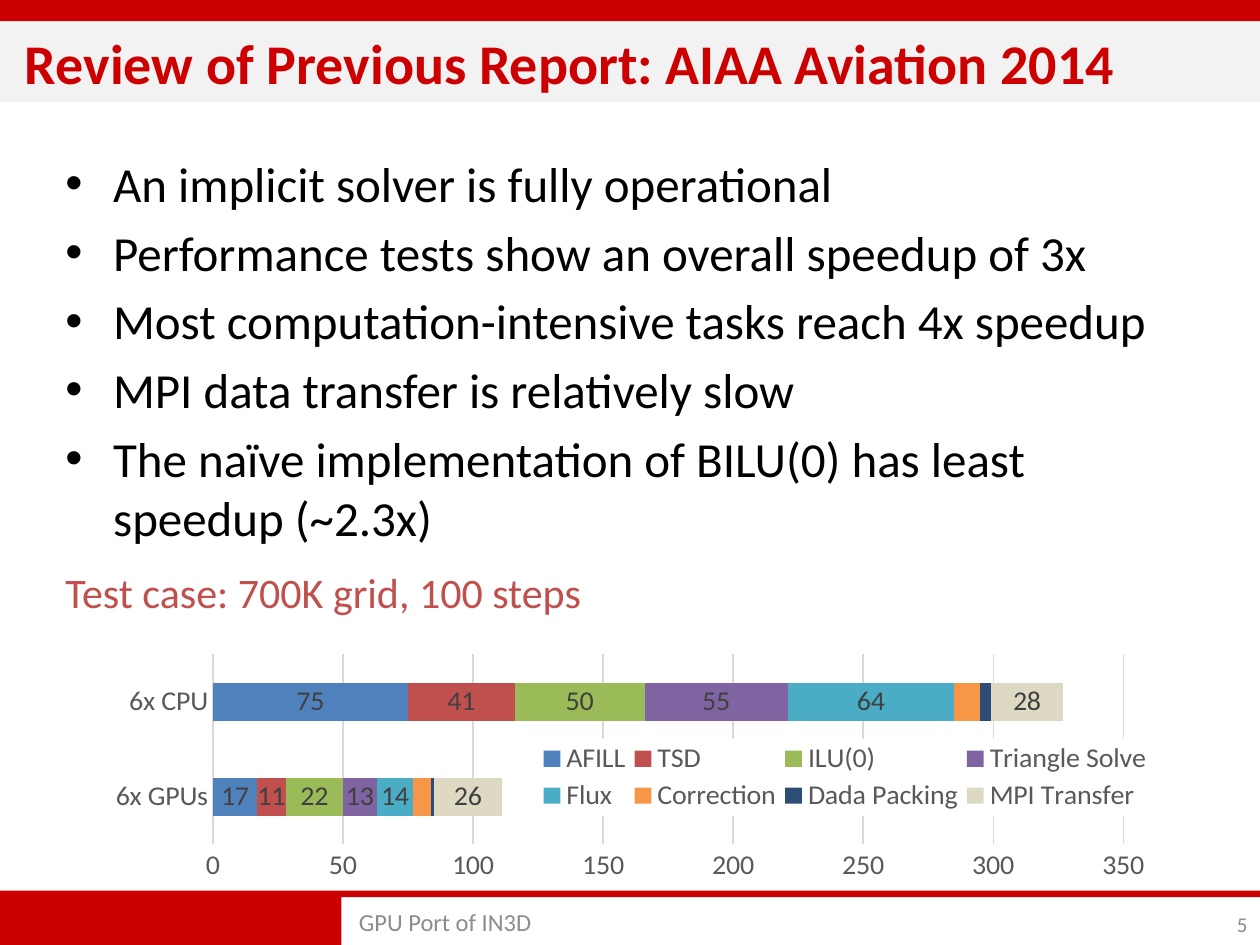
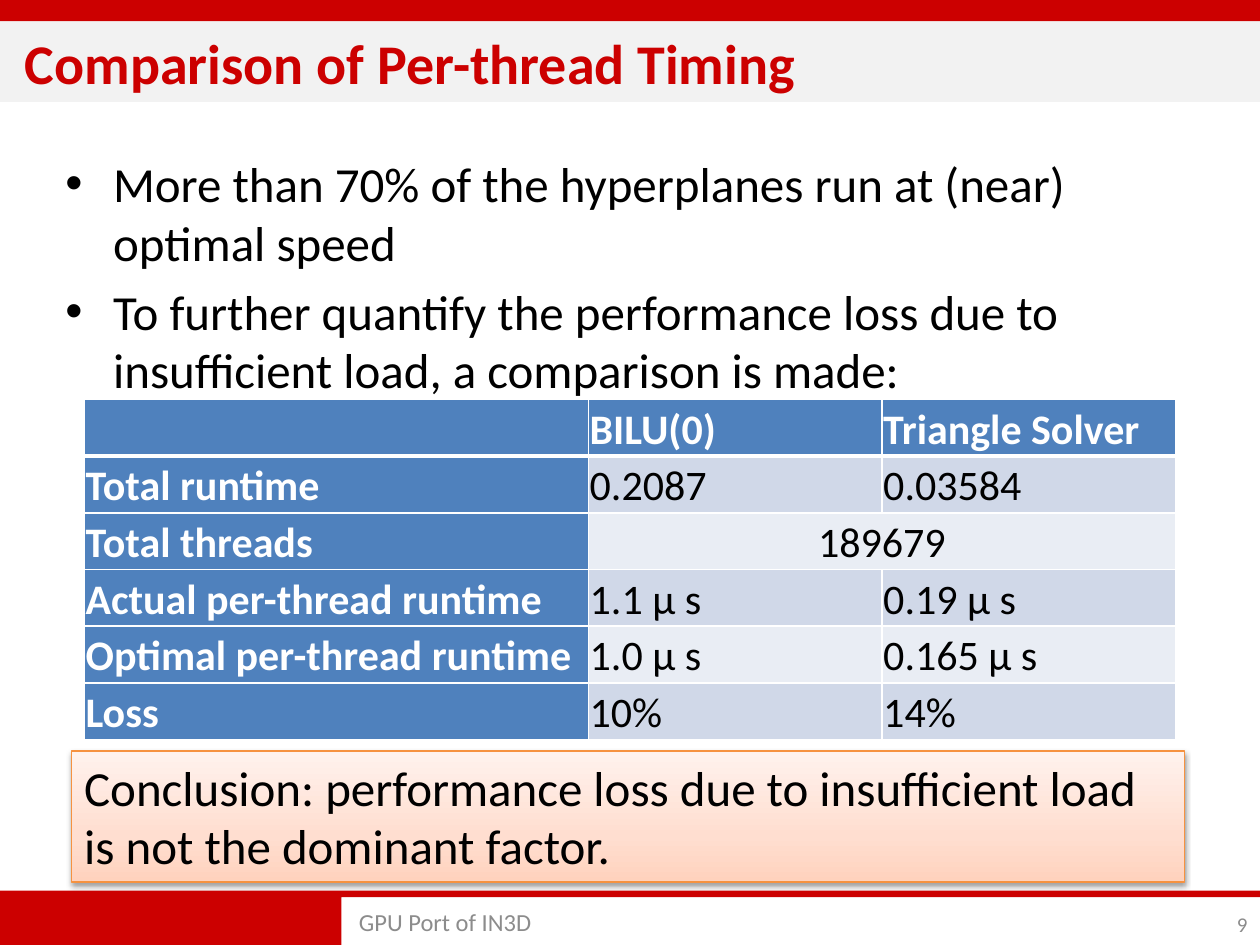
from copy import deepcopy

from lxml import etree
from pptx import Presentation
from pptx.chart.data import CategoryChartData
from pptx.dml.color import RGBColor
from pptx.enum.chart import XL_CHART_TYPE, XL_LEGEND_POSITION, XL_TICK_MARK
from pptx.enum.shapes import MSO_SHAPE
from pptx.enum.text import MSO_ANCHOR, PP_ALIGN
from pptx.oxml import parse_xml
from pptx.oxml.ns import nsdecls, qn
from pptx.util import Inches, Pt

RECTANGLE, CORNER = MSO_SHAPE.RECTANGLE, MSO_SHAPE.CORNER
TOP, MIDDLE = MSO_ANCHOR.TOP, MSO_ANCHOR.MIDDLE
LEFT, CENTER, RIGHT = PP_ALIGN.LEFT, PP_ALIGN.CENTER, PP_ALIGN.RIGHT
BAR_STACKED = XL_CHART_TYPE.BAR_STACKED
LEGEND_BOTTOM = XL_LEGEND_POSITION.BOTTOM
NO_TICKS = XL_TICK_MARK.NONE

FONT = "Calibri"
COLORS = {
    "brand": "CC0000", "title band": "F2F2F2", "footer": "8C8C8C",
    "text": "000000", "white": "FFFFFF", "test case": "C0504D",
    "axis text": "595959", "label": "404040", "grid": "D9D9D9",
    "header": "4F81BD", "odd row": "D0D8E8", "even row": "E9EDF4",
    "box line": "F69240",
}
BOX_GRADIENT = [(0, "FFD2BD"), (0.35, "FFDED0"), (1, "FFF2ED")]

SLIDE_BOX = (0, 0, 10, 7.5)
BODY_BOX = (0.42, 1.17, 9.17, 5.83)
CHART_BOX = (0.67, 5.08, 8.5, 1.92)
TABLE_BOX = (0.67, 3.17, 8.67, 2.7)
CONCLUSION_BOX = (0.57, 5.96, 8.83, 1.04)

PLOT_LAYOUT = (0.12, 0.06, 0.85, 0.81)
LEGEND_LAYOUT = (0.42, 0.42, 0.58, 0.33)
CATEGORIES = ["6x GPUs", "6x CPU"]
# name, color, values, whether the values are labelled
SERIES = [
    ("AFILL", "4F81BD", (17, 75), True),
    ("TSD", "C0504D", (11, 41), True),
    ("ILU(0)", "9BBB59", (22, 50), True),
    ("Triangle Solve", "8064A2", (13, 55), True),
    ("Flux", "4BACC6", (14, 64), True),
    ("Correction", "F79646", (7, 10), False),
    ("Dada Packing", "2C4D75", (1, 4), False),
    ("MPI Transfer", "DDD9C3", (26, 28), True),
]

TIMINGS = [
    ("", "BILU(0)", "Triangle Solver"),
    ("Total runtime", "0.2087", "0.03584"),
    ("Total threads", "189679", None),
    ("Actual per-thread runtime", "1.1 μ s", "0.19 μ s"),
    ("Optimal per-thread runtime", "1.0 μ s", "0.165 μ s"),
    ("Loss", "10%", "14%"),
]


def rgb(name):
    return RGBColor.from_string(COLORS.get(name, name))


def style_font(font, size, color, bold=False):
    font.name, font.size, font.bold = FONT, Pt(size), bold
    font.color.rgb = rgb(color)


def add_box(slide, box, fill, kind=RECTANGLE):
    """Add a borderless preset shape."""
    shape = slide.shapes.add_shape(kind, *map(Inches, box))
    shape.shadow.inherit = False
    shape.fill.solid()
    shape.fill.fore_color.rgb = rgb(fill)
    shape.line.fill.background()
    return shape


def write(shape, text, size, color, bold=False, anchor=TOP, align=LEFT):
    """Put one styled paragraph in a shape and return it."""
    frame = shape.text_frame
    frame.word_wrap = True
    frame.vertical_anchor = anchor
    paragraph = frame.paragraphs[0]
    paragraph.text = text
    paragraph.alignment = align
    style_font(paragraph.font, size, color, bold)
    return paragraph


def add_text_box(slide, box):
    return slide.shapes.add_textbox(*map(Inches, box))


def add_frame(slide, box, title, number):
    """Add the bands, title and footer that every slide has."""
    left, top, width, height = box
    footer_height, footer_line, footer_block = 0.43, 0.05, 2.71
    footer_top = top + height - footer_height
    corner = add_box(slide, (left, footer_top, width, footer_height), "brand", CORNER)
    corner.adjustments[0] = footer_line / footer_height
    corner.adjustments[1] = footer_block / footer_height
    corner._element.spPr.find(qn("a:xfrm")).set("flipV", "1")
    add_box(slide, (left, top, width, 0.17), "brand")

    title_band = add_box(slide, (left, top + 0.17, width, 0.64), "title band")
    paragraph = write(title_band, title, 32, "brand", bold=True, anchor=MIDDLE)
    paragraph._p.get_or_add_pPr().set("marL", str(Inches(0.1)))

    footer = add_text_box(slide, (left + 2.75, footer_top + 0.06, 5.58, 0.37))
    write(footer, "GPU Port of IN3D", 14, "footer", anchor=MIDDLE)
    page = add_text_box(slide, (left + width - 0.58, footer_top + 0.1, 0.58, 0.33))
    write(page, str(number), 12, "footer", anchor=MIDDLE, align=RIGHT)


def add_body(slide, box, bullets, closing=None):
    """Add a bullet list, with an optional plain closing line."""
    frame = add_text_box(slide, box).text_frame
    frame.word_wrap = True
    for index, text in enumerate(bullets):
        paragraph = frame.add_paragraph() if index else frame.paragraphs[0]
        paragraph.text = text
        properties = paragraph._p.get_or_add_pPr()
        properties.set("marL", str(Inches(0.38)))
        properties.set("indent", str(Inches(-0.38)))
        etree.SubElement(properties, qn("a:buFont"), typeface="Arial")
        etree.SubElement(properties, qn("a:buChar"), char="•")
        style_font(paragraph.font, 28, "text")
        if index:
            paragraph.space_before = Pt(5.6)
    if closing:
        paragraph = frame.add_paragraph()
        paragraph.text = closing
        paragraph.space_before = Pt(12)
        style_font(paragraph.font, 24, "test case")


def manual_layout(box, inner=False):
    """Build a chart layout from fractions of the chart's size."""
    target = '<c:layoutTarget val="inner"/>' if inner else ""
    modes = '<c:xMode val="edge"/><c:yMode val="edge"/>'
    sizes = "".join(f'<c:{key} val="{value}"/>' for key, value in zip("xywh", box))
    return parse_xml(f'<c:layout {nsdecls("c")}><c:manualLayout>'
                     f"{target}{modes}{sizes}</c:manualLayout></c:layout>")


def place_legend(legend):
    legend.position = LEGEND_BOTTOM
    legend.include_in_layout = False
    style_font(legend.font, 16, "axis text")
    element = legend._element
    for layout in element.findall(qn("c:layout")):
        element.remove(layout)
    element.find(qn("c:legendPos")).addnext(manual_layout(LEGEND_LAYOUT))
    element.find(qn("c:txPr")).addprevious(parse_xml(
        f'<c:spPr {nsdecls("c", "a")}><a:solidFill>'
        f'<a:srgbClr val="{COLORS["white"]}"/></a:solidFill></c:spPr>'))


def add_runtime_chart(slide, box):
    data = CategoryChartData()
    data.categories = CATEGORIES
    for name, _, values, _ in SERIES:
        data.add_series(name, values)
    chart = slide.shapes.add_chart(BAR_STACKED, *map(Inches, box), data).chart
    chart.has_title = False
    style_font(chart.font, 16, "text")

    plot = chart.plots[0]
    plot.gap_width, plot.overlap = 150, 100
    plot.vary_by_categories = False
    for series, (_, color, _, labelled) in zip(plot.series, SERIES):
        series.format.fill.solid()
        series.format.fill.fore_color.rgb = rgb(color)
        if labelled:
            series.data_labels.show_value = True
            style_font(series.data_labels.font, 16, "label")

    category_axis, value_axis = chart.category_axis, chart.value_axis
    for axis in (category_axis, value_axis):
        axis.major_tick_mark = axis.minor_tick_mark = NO_TICKS
        style_font(axis.tick_labels.font, 16, "axis text")
    value_axis.minimum_scale, value_axis.maximum_scale = 0, 350
    value_axis.major_unit = 50
    value_axis.format.line.fill.background()
    value_axis.has_major_gridlines = True
    for line in (category_axis.format.line, value_axis.major_gridlines.format.line):
        line.color.rgb = rgb("grid")
        line.width = Pt(0.75)

    plot_area = chart._chartSpace.chart.plotArea
    for layout in plot_area.findall(qn("c:layout")):
        plot_area.remove(layout)
    plot_area.insert(0, manual_layout(PLOT_LAYOUT, inner=True))
    chart.has_legend = True
    place_legend(chart.legend)


def set_borders(cell, bottom):
    """Draw white cell borders: 1 point, and the given width below."""
    properties = cell._tc.get_or_add_tcPr()
    widths = {"lnL": 1, "lnR": 1, "lnT": 1, "lnB": bottom}
    for index, (side, width) in enumerate(widths.items()):
        properties.insert(index, parse_xml(
            f'<a:{side} {nsdecls("a")} w="{Pt(width)}"><a:solidFill>'
            f'<a:srgbClr val="{COLORS["white"]}"/></a:solidFill></a:{side}>'))


def add_timing_table(slide, box):
    table = slide.shapes.add_table(
        len(TIMINGS), len(TIMINGS[0]), *map(Inches, box)).table
    for column, width in zip(table.columns, (4, 2.33, 2.33)):
        column.width = Inches(width)
    for row_index, row in enumerate(TIMINGS):
        table.rows[row_index].height = Inches(box[3] / len(TIMINGS))
        band = "odd row" if row_index % 2 else "even row"
        for column_index, text in enumerate(row):
            cell = table.cell(row_index, column_index)
            heading = row_index == 0 or column_index == 0
            cell.fill.solid()
            cell.fill.fore_color.rgb = rgb("header" if heading else band)
            set_borders(cell, bottom=1 if row_index else 3)
            cell.margin_left = cell.margin_right = Inches(0.01)
            cell.margin_top = cell.margin_bottom = Inches(0.01)
            paragraph = cell.text_frame.paragraphs[0]
            paragraph.text = text or ""
            paragraph.line_spacing = 1.07
            style_font(paragraph.font, 24, "white" if heading else "text", heading)
        if None in row:
            table.cell(row_index, 1).merge(table.cell(row_index, 2))
            table.cell(row_index, 1).text_frame.paragraphs[0].alignment = CENTER


def add_conclusion(slide, box, text):
    """Add a peach gradient box with a soft shadow."""
    shape = add_box(slide, box, "white")
    shape.fill.gradient()
    shape.fill.gradient_angle = 90
    stop_list = shape._element.spPr.find(qn("a:gradFill")).find(qn("a:gsLst"))
    stop_list.append(deepcopy(stop_list[0]))
    for stop, (position, color) in zip(shape.fill.gradient_stops, BOX_GRADIENT):
        stop.position = position
        stop.color.rgb = rgb(color)
    shape.line.color.rgb = rgb("box line")
    shape.line.width = Pt(0.75)
    shape._element.spPr.find(qn("a:effectLst")).append(parse_xml(
        f'<a:outerShdw {nsdecls("a")} blurRad="{Pt(3.1)}" dist="{Pt(1.6)}" '
        f'dir="5400000" rotWithShape="0"><a:srgbClr val="{COLORS["text"]}">'
        '<a:alpha val="38000"/></a:srgbClr></a:outerShdw>'))
    write(shape, text, 28, "text")


def build_review_slide(slide):
    add_frame(slide, SLIDE_BOX, "Review of Previous Report: AIAA Aviation 2014", 5)
    add_body(slide, BODY_BOX, [
        "An implicit solver is fully operational",
        "Performance tests show an overall speedup of 3x",
        "Most computation-intensive tasks reach 4x speedup",
        "MPI data transfer is relatively slow",
        "The naïve implementation of BILU(0) has least speedup (~2.3x)",
    ], closing="Test case: 700K grid, 100 steps")
    add_runtime_chart(slide, CHART_BOX)


def build_timing_slide(slide):
    add_frame(slide, SLIDE_BOX, "Comparison of Per-thread Timing", 9)
    add_timing_table(slide, TABLE_BOX)
    add_body(slide, BODY_BOX, [
        "More than 70% of the hyperplanes run at (near) optimal speed",
        "To further quantify the performance loss due to insufficient load, "
        "a comparison is made:",
    ])
    add_conclusion(slide, CONCLUSION_BOX,
                   "Conclusion: performance loss due to insufficient load "
                   "is not the dominant factor.")


def main():
    presentation = Presentation()
    presentation.slide_width = Inches(SLIDE_BOX[2])
    presentation.slide_height = Inches(SLIDE_BOX[3])
    blank = presentation.slide_layouts[6]
    for build in (build_review_slide, build_timing_slide):
        build(presentation.slides.add_slide(blank))
    presentation.save("out.pptx")


if __name__ == "__main__":
    main()
